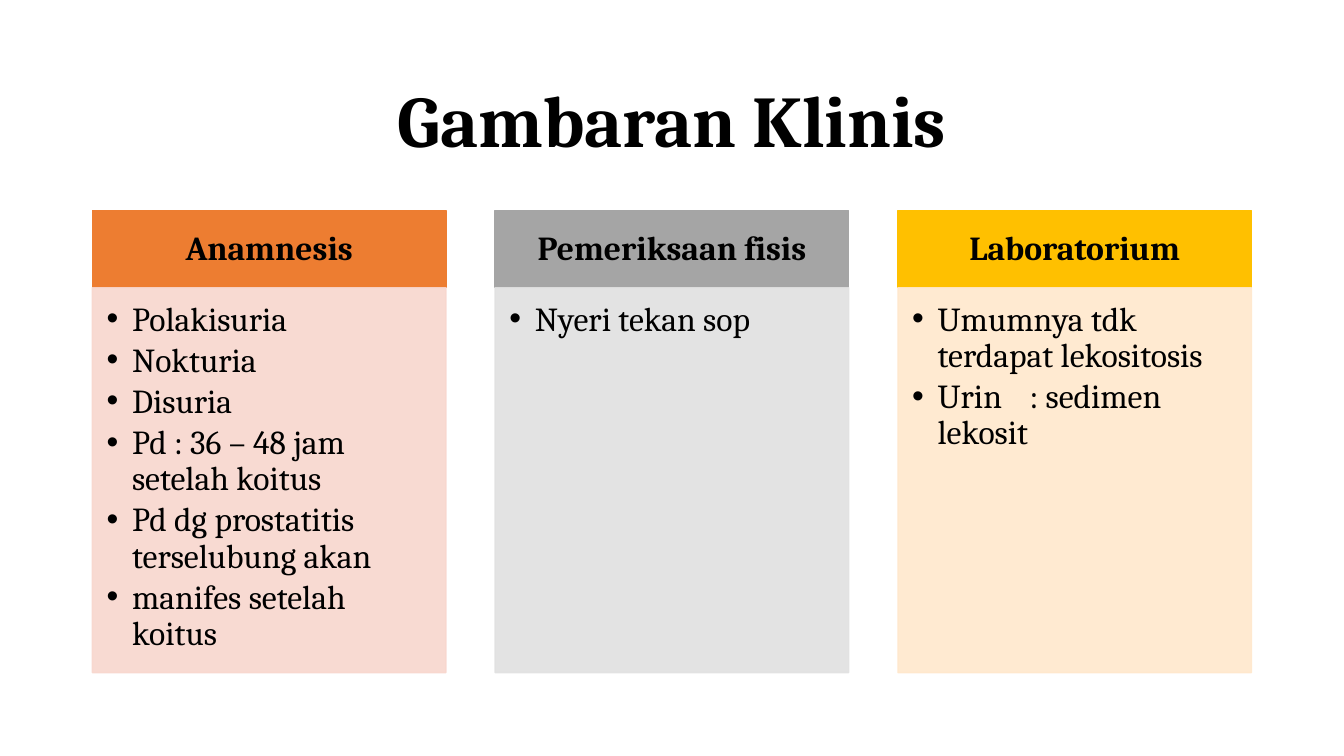
from dataclasses import dataclass

from lxml import etree
from pptx import Presentation
from pptx.dml.color import RGBColor
from pptx.enum.shapes import MSO_SHAPE
from pptx.enum.text import MSO_ANCHOR, MSO_AUTO_SIZE, PP_ALIGN
from pptx.oxml.ns import qn
from pptx.util import Cm, Pt

RECTANGLE = MSO_SHAPE.RECTANGLE
TOP, MIDDLE = MSO_ANCHOR.TOP, MSO_ANCHOR.MIDDLE
LEFT, CENTER = PP_ALIGN.LEFT, PP_ALIGN.CENTER
NO_AUTOFIT = MSO_AUTO_SIZE.NONE
TITLE_ONLY = 5


@dataclass(frozen=True)
class Theme:
    font: str = "Cambria"
    text: str = "000000"
    title_size: int = 52
    text_size: int = 24
    line_spacing: float = 0.9
    list_opacity: int = 90
    orange: tuple = ("ED7D31", "F8D7CE")
    grey: tuple = ("A5A5A5", "E1E1E1")
    yellow: tuple = ("FFC000", "FFE8CC")


THEME = Theme()

TITLE_BOX = (2.33, 1.55, 29.21, 3.15)
COLUMNS_BOX = (2.33, 5.31, 29.21, 11.64)
COLUMN_GAP = 1.24
HEADING_HEIGHT = 1.94

HEADING_FRAME = {
    "vertical_anchor": MIDDLE,
    "margin_left": Cm(0.48), "margin_top": Cm(0.28),
    "margin_right": Cm(0.48), "margin_bottom": Cm(0.28),
}
LIST_FRAME = {
    "vertical_anchor": TOP,
    "margin_left": Cm(0.36), "margin_top": Cm(0.36),
    "margin_right": Cm(0.48), "margin_bottom": Cm(0.53),
}

COLUMNS = [
    ("Anamnesis", THEME.orange, [
        "Polakisuria",
        "Nokturia",
        "Disuria",
        "Pd : 36 – 48 jam setelah koitus",
        "Pd dg prostatitis terselubung akan",
        "manifes setelah koitus",
    ]),
    ("Pemeriksaan fisis", THEME.grey, ["Nyeri tekan sop"]),
    ("Laboratorium", THEME.yellow, [
        "Umumnya tdk terdapat lekositosis",
        "Urin\t: sedimen lekosit",
    ]),
]


def set_attributes(target, values):
    for name, value in values.items():
        setattr(target, name, value)


def write_paragraph(paragraph, text, size, bold, alignment, space_after=0):
    set_attributes(paragraph, {
        "alignment": alignment,
        "line_spacing": THEME.line_spacing,
        "space_before": Pt(0),
        "space_after": Pt(space_after),
    })
    run = paragraph.add_run()
    run.text = text
    set_attributes(run.font, {"name": THEME.font, "size": Pt(size), "bold": bold})
    run.font.color.rgb = RGBColor.from_string(THEME.text)


def add_bullet(paragraph):
    """Give the paragraph a hanging bullet and its default tab distance."""
    properties = paragraph._p.get_or_add_pPr()
    indent = Cm(0.64)
    properties.set("marL", str(indent))
    properties.set("indent", str(-indent))
    properties.set("defTabSz", str(Cm(2.96)))
    etree.SubElement(properties, qn("a:buFont")).set("typeface", "Arial")
    etree.SubElement(properties, qn("a:buChar")).set("char", "•")


def add_panel(slide, box, color, frame_format, opacity=100):
    """Add a rectangle and return its empty text frame."""
    shape = slide.shapes.add_shape(RECTANGLE, *map(Cm, box))
    shape.shadow.inherit = False
    shape.fill.solid()
    shape.line.width = Pt(1)
    for fill in (shape.fill, shape.line.fill):
        fill.solid()
        fill.fore_color.rgb = RGBColor.from_string(color)
    if opacity < 100:
        for color_element in shape._element.spPr.iter(qn("a:srgbClr")):
            etree.SubElement(color_element, qn("a:alpha")).set("val", str(opacity * 1000))
    frame = shape.text_frame
    set_attributes(frame, {"word_wrap": True, **frame_format})
    return frame


def add_title(slide, box, text):
    title = slide.shapes.title
    left, top, width, height = map(Cm, box)
    set_attributes(title, {"left": left, "top": top, "width": width, "height": height})
    frame = title.text_frame
    set_attributes(frame, {"vertical_anchor": MIDDLE, "word_wrap": True,
                           "auto_size": NO_AUTOFIT})
    write_paragraph(frame.paragraphs[0], text, THEME.title_size, True, CENTER)


def add_column(slide, box, heading, colors, items):
    left, top, width, height = box
    heading_color, list_color = colors
    heading_box = (left, top, width, HEADING_HEIGHT)
    list_box = (left, top + HEADING_HEIGHT, width, height - HEADING_HEIGHT)

    frame = add_panel(slide, heading_box, heading_color, HEADING_FRAME)
    write_paragraph(frame.paragraphs[0], heading, THEME.text_size, True, CENTER)

    frame = add_panel(slide, list_box, list_color, LIST_FRAME, THEME.list_opacity)
    for index, item in enumerate(items):
        paragraph = frame.add_paragraph() if index else frame.paragraphs[0]
        write_paragraph(paragraph, item, THEME.text_size, False, LEFT, space_after=3.5)
        add_bullet(paragraph)


def add_columns(slide, box, columns):
    left, top, width, height = box
    column_width = (width - COLUMN_GAP * (len(columns) - 1)) / len(columns)
    for index, column in enumerate(columns):
        column_left = left + index * (column_width + COLUMN_GAP)
        add_column(slide, (column_left, top, column_width, height), *column)


def main():
    presentation = Presentation()
    presentation.slide_width, presentation.slide_height = Cm(33.87), Cm(19.05)
    slide = presentation.slides.add_slide(presentation.slide_layouts[TITLE_ONLY])
    add_title(slide, TITLE_BOX, "Gambaran Klinis")
    add_columns(slide, COLUMNS_BOX, COLUMNS)
    presentation.save("out.pptx")


if __name__ == "__main__":
    main()
